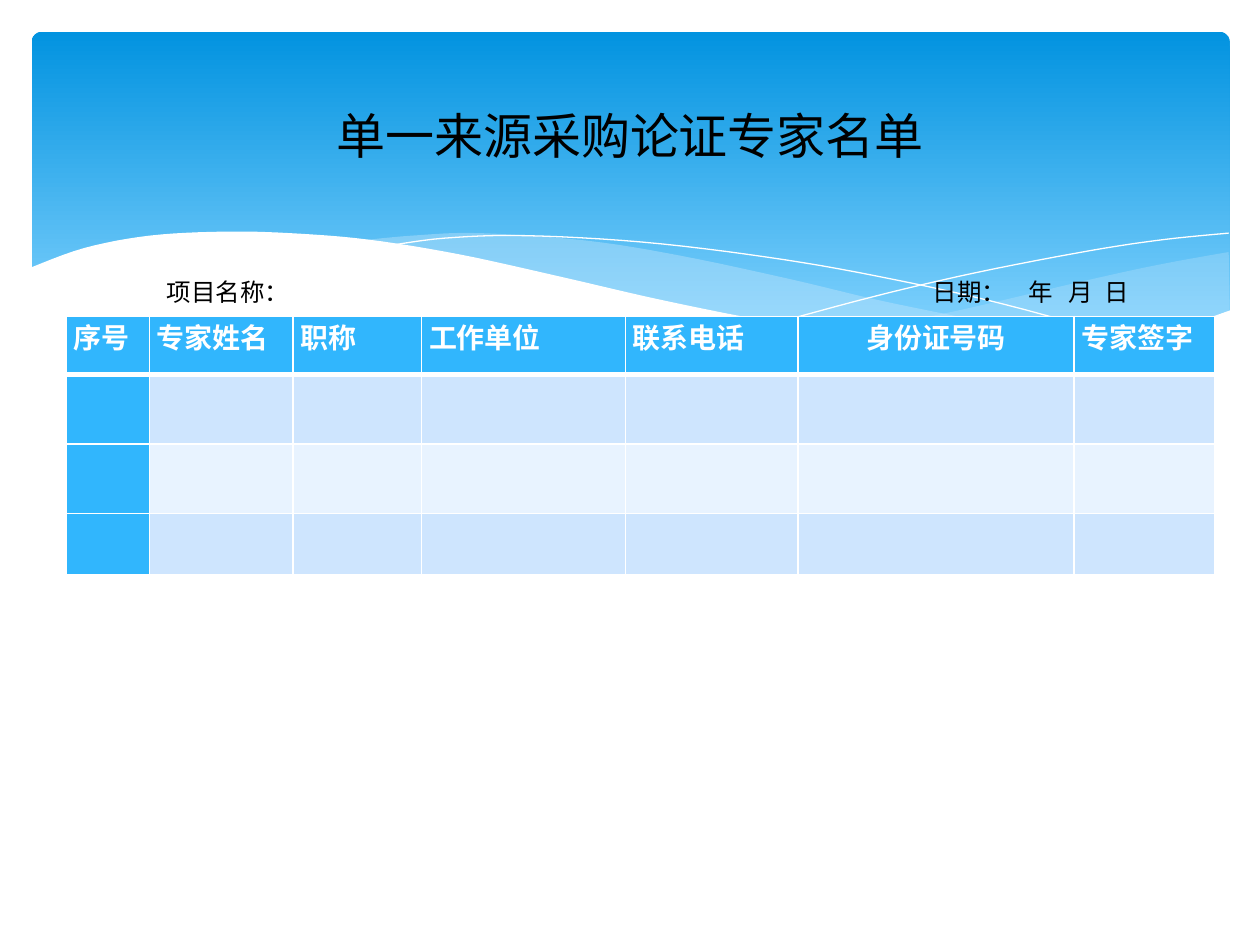
import pptx
import pptx.util
import pptx.dml.color
import pptx.enum.shapes
import pptx.enum.text
import pptx.oxml
import pptx.oxml.ns

Cm = pptx.util.Cm
Pt = pptx.util.Pt
ALIGN = pptx.enum.text.PP_ALIGN
MID = pptx.enum.text.MSO_ANCHOR.MIDDLE
NS = pptx.oxml.ns.nsdecls("a")

TITLE = "单一来源采购论证专家名单"
LABELS = ["项目名称：", "日期：", "年", "月", "日"]
STOPS = [15.44, 17.37, 18.19, 18.9]
HEADS = ["序号", "专家姓名", "职称", "工作单位", "联系电话", "身份证号码", "专家签字"]
WIDTHS = [1.68, 2.9, 2.59, 4.11, 3.48, 5.56, 2.84]
HEIGHTS = [1.17, 1.4, 1.4, 1.24]
BLUE, WHITE, BLACK, PALE = "31B6FD", "FFFFFF", "000000", "C6E7FC"
BANDS = ["E8F3FF", "CEE5FE"]

WAVES = [
    {"fill": PALE, "alpha": 29, "parts": [
        [(24.77, 5.08), (23.39, 5.33), (21.87, 5.66), (19.13, 6.3), (16.79, 6.73)],
        [(16.79, 6.73), (18.26, 6.91), (19.53, 7.04), (20.93, 7.04),
         (22.38, 6.93), (23.75, 6.65), (24.79, 6.27)]]},
    {"fill": PALE, "alpha": 40, "parts": [
        [(22.68, 6.93), (20.5, 6.6), (17.93, 6.1), (15.98, 5.64), (13.74, 5.16),
         (11.81, 4.85), (9.65, 4.7), (8.33, 4.75), (7.26, 4.85)],
        [(7.26, 4.85), (9.19, 5.16), (11.4, 5.64), (14.38, 6.3),
         (16.89, 6.76), (19, 7.01), (20.78, 7.06), (22.68, 6.93)]]},
    {"line": WHITE, "parts": [
        [(7.85, 4.95), (8.97, 4.8), (10.57, 4.75), (12.95, 4.88),
         (15.44, 5.18), (17.65, 5.56), (20.19, 6.12), (23.04, 6.91)]]},
    {"line": WHITE, "parts": [
        [(15.57, 6.53), (17.65, 5.97), (19.71, 5.49), (22, 5.05),
         (23.47, 4.83), (24.77, 4.7)]]},
    {"fill": WHITE, "alpha": 100, "parts": [
        [(24.82, 6.25), (23.62, 6.65), (22.23, 6.93), (20.55, 7.04), (18.44, 6.91),
         (15.9, 6.55), (13.44, 6.07), (11.35, 5.59), (9.27, 5.13), (7.42, 4.83),
         (5.84, 4.7), (4.5, 4.67), (3.02, 4.75), (1.7, 5), (0.58, 5.41)],
        [(0.58, 8.36), (24.82, 8.36)]]},
]


def hue(code):
    return pptx.dml.color.RGBColor.from_string(code)


def put(item, **form):
    for key, value in form.items():
        setattr(item, key, value)


def paint(fill, code):
    fill.solid()
    fill.fore_color.rgb = hue(code)


def write(para, text, size, face, code, align, bold=False):
    para.text = text
    para.alignment = align
    for run in para.runs:
        put(run.font, size=Pt(size), name=face, bold=bold)
        run.font.color.rgb = hue(code)


def curve(knots, steps=6):
    ends = [knots[0], *knots, knots[-1]]
    dots = [knots[0]]
    for a, b, c, d in zip(ends, ends[1:], ends[2:], ends[3:]):
        for step in range(1, steps + 1):
            t = step / steps
            dots.append(tuple(
                q + t / 2 * (r - p + t * (2*p - 5*q + 4*r - s + t * (3*q - p - 3*r + s)))
                for p, q, r, s in zip(a, b, c, d)))
    return dots


def wave(shapes, form):
    dots = [(Cm(x), Cm(y)) for part in form["parts"] for x, y in curve(part)]
    pen = shapes.build_freeform(*dots[0])
    pen.add_line_segments(dots[1:], close="fill" in form)
    shape = pen.convert_to_shape()
    shape.shadow.inherit = False
    if "fill" in form:
        paint(shape.fill, form["fill"])
        shape.line.fill.background()
        tone = shape.element.spPr.find(".//" + pptx.oxml.ns.qn("a:srgbClr"))
        tone.append(pptx.oxml.parse_xml(f'<a:alpha {NS} val="{form["alpha"] * 1000}"/>'))
    else:
        shape.fill.background()
        paint(shape.line.fill, form["line"])
        shape.line.width = Pt(0)


def edge(cell, base):
    props = cell._tc.get_or_add_tcPr()
    for spot, (side, width) in enumerate(dict(L=1, R=1, T=1, B=base).items()):
        props.insert(spot, pptx.oxml.parse_xml(
            f'<a:ln{side} {NS} w="{Pt(width)}"><a:solidFill>'
            f'<a:srgbClr val="{WHITE}"/></a:solidFill></a:ln{side}>'))


def banner(shapes):
    box = shapes.add_shape(pptx.enum.shapes.MSO_SHAPE.ROUNDED_RECTANGLE,
                           Cm(0.64), Cm(0.64), Cm(24.15), Cm(6.86))
    box.adjustments[0] = 0.03
    box.shadow.inherit = False
    box.line.fill.background()
    box.fill.gradient()
    box.fill.gradient_angle = 270
    for stop, place, code in zip(box.fill.gradient_stops, (0, 0.9), ("0293E0", "83D3FE")):
        stop.position = place
        stop.color.rgb = hue(code)


def roster(shapes):
    table = shapes.add_table(len(HEIGHTS), len(HEADS), Cm(1.33), Cm(6.38),
                             Cm(sum(WIDTHS)), Cm(sum(HEIGHTS))).table
    table.first_col = True
    for col, width in zip(table.columns, WIDTHS):
        col.width = Cm(width)
    for r, height in enumerate(HEIGHTS):
        table.rows[r].height = Cm(height)
        for c, head in enumerate(HEADS):
            cell = table.cell(r, c)
            put(cell, margin_left=Cm(0.15), margin_right=Cm(0.15),
                margin_top=0, margin_bottom=0)
            paint(cell.fill, BLUE if r == 0 or c == 0 else BANDS[r % 2])
            edge(cell, 1 if r else 3)
            if r == 0:
                align = ALIGN.CENTER if head == "身份证号码" else ALIGN.JUSTIFY
                write(cell.text_frame.paragraphs[0], head, 16, "Calibri", WHITE, align, True)


def caption(shapes):
    frame = shapes.add_textbox(Cm(2.31), Cm(5.46), Cm(21.59), Cm(0.86)).text_frame
    put(frame, word_wrap=True, vertical_anchor=MID, margin_left=Cm(1.05))
    para = frame.paragraphs[0]
    write(para, "\t".join(LABELS), 14, "Arial", BLACK, ALIGN.LEFT)
    tabs = "".join(f'<a:tab pos="{Cm(stop)}" algn="l"/>' for stop in STOPS)
    para._p.get_or_add_pPr().append(pptx.oxml.parse_xml(f"<a:tabLst {NS}>{tabs}</a:tabLst>"))


def main():
    deck = pptx.Presentation()
    put(deck, slide_width=Cm(25.4), slide_height=Cm(19.05))
    shapes = deck.slides.add_slide(deck.slide_layouts[5]).shapes
    banner(shapes)
    for form in WAVES:
        wave(shapes, form)
    title = shapes.title
    put(title, left=Cm(1.27), top=Cm(1.93), width=Cm(22.86), height=Cm(1.57))
    put(title.text_frame, vertical_anchor=MID, word_wrap=True)
    write(title.text_frame.paragraphs[0], TITLE, 28, "Arial", BLACK, ALIGN.CENTER)
    title.element.getparent().append(title.element)
    roster(shapes)
    caption(shapes)
    deck.save("out.pptx")


if __name__ == "__main__":
    main()
